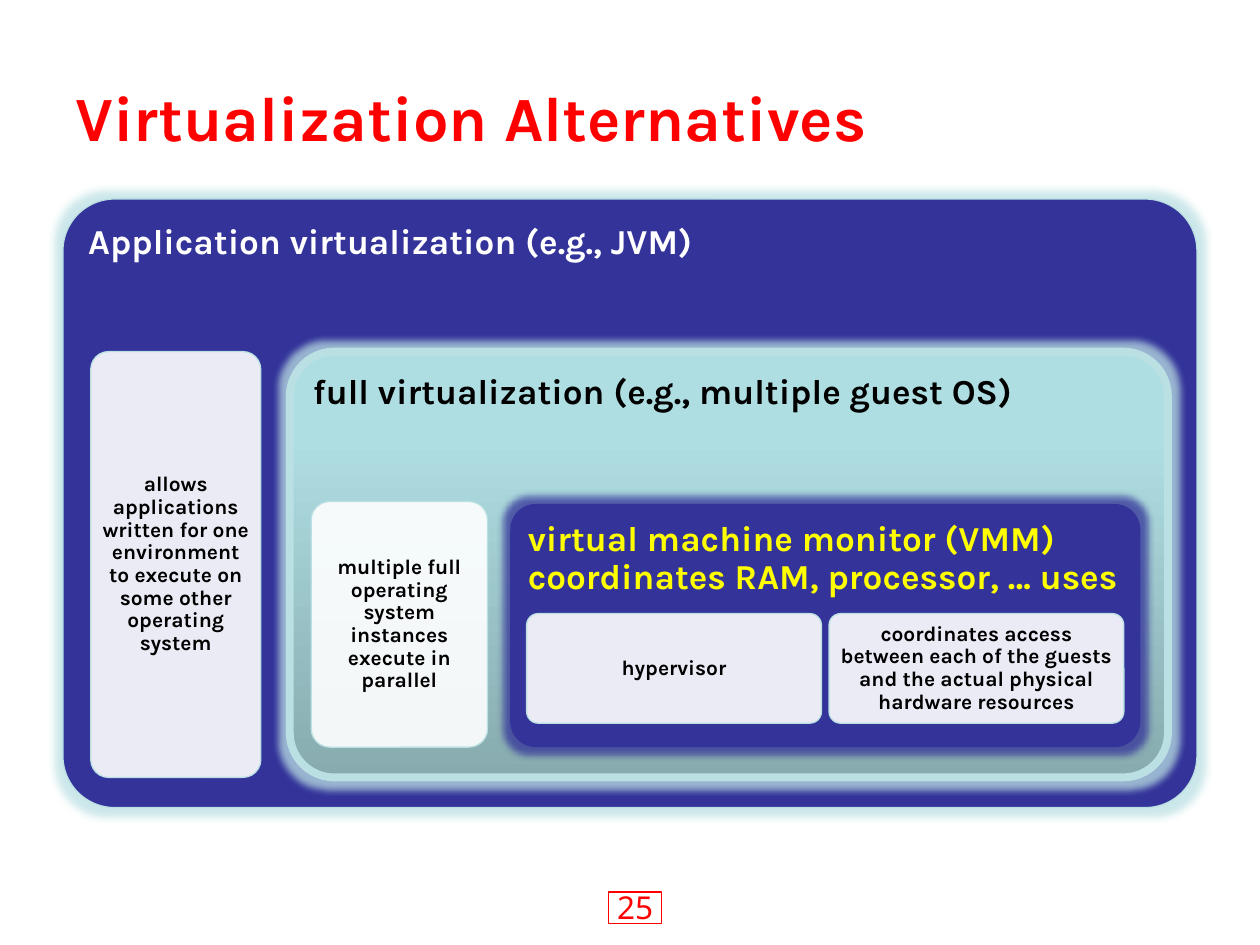
from lxml import etree
from pptx import Presentation
from pptx import util as u
from pptx.dml.color import RGBColor
from pptx.enum import shapes, text
from pptx.oxml import parse_xml
from pptx.oxml.ns import nsdecls, qn

PX = 9144  # EMU in one px, 100 px to the inch
HUE = {"red": "FF0000", "blue": "333399", "teal": "BBE0E3", "white": "FFFFFF",
       "black": "000000", "yellow": "FFFF00"}
RAMP = [(0, "87ABAE"), (80, "AFDEE2"), (100, "AFE0E4")]
KIND, SIDE, EDGE = shapes.MSO_SHAPE, text.PP_ALIGN, text.MSO_ANCHOR
HEAD = {"size": u.Pt(20), "name": "Karla", "bold": True}
BODY = {**HEAD, "size": u.Pt(12)}


def rgb(hue):
    return RGBColor.from_string(HUE[hue])


def place(box):
    return [n * PX for n in box]


def write(shape, words, form, hue, align=SIDE.LEFT, anchor=EDGE.TOP, pad=None, lead=None):
    frame = shape.text_frame
    frame.word_wrap = True
    frame.vertical_anchor = anchor
    if pad is not None:
        for side in ("left", "top", "right", "bottom"):
            setattr(frame, f"margin_{side}", pad * PX)
    para = frame.paragraphs[0]
    para.alignment = align
    if lead:
        para.line_spacing = lead
    run = para.add_run()
    run.text = words
    for key, value in form.items():
        setattr(run.font, key, value)
    run.font.color.rgb = rgb(hue)


def block(slide, kind, box, fill=None, line=None, width=0.75, curve=None):
    shape = slide.shapes.add_shape(kind, *place(box))
    shape.shadow.inherit = False
    if curve:
        shape.adjustments[0] = curve
    if fill:
        shape.fill.solid()
        shape.fill.fore_color.rgb = rgb(fill)
    else:
        shape.fill.background()
    if line:
        shape.line.color.rgb = rgb(line)
        shape.line.width = u.Pt(width)
    else:
        shape.line.fill.background()
    return shape


def glow(shape, hue):
    effect = shape._element.spPr.find(qn("a:effectLst"))
    halo = etree.SubElement(effect, qn("a:glow"), rad=str(u.Pt(8)))
    color = etree.SubElement(halo, qn("a:srgbClr"), val=HUE[hue])
    etree.SubElement(color, qn("a:alpha"), val="75000")


def shade(shape):
    stops = "".join(f'<a:gs pos="{at * 1000}"><a:srgbClr val="{tone}"/></a:gs>'
                    for at, tone in RAMP)
    props = shape._element.spPr
    props.replace(props.find(qn("a:noFill")), parse_xml(
        f'<a:gradFill {nsdecls("a")} rotWithShape="1"><a:gsLst>{stops}</a:gsLst>'
        '<a:lin ang="16200000" scaled="0"/></a:gradFill>'))


def card(slide, box, words):
    shape = block(slide, KIND.ROUNDED_RECTANGLE, box, "white", "teal", curve=0.105)
    color = shape._element.spPr.find(qn("a:solidFill"))[0]
    etree.SubElement(color, qn("a:alpha"), val="90000")
    write(shape, words, BODY, "black", SIDE.CENTER, EDGE.MIDDLE, 5, 0.9)


def panel(slide, box, words, ink, halo, curve=0.105, **style):
    shape = block(slide, KIND.ROUNDED_RECTANGLE, box, curve=curve, **style)
    glow(shape, halo)
    write(shape, words, HEAD, ink, pad=8, lead=0.9)
    return shape


# Innermost layer: two equal cards side by side
def monitor(slide, box):
    x, y, w, h = box
    panel(slide, box, "virtual machine monitor (VMM) coordinates RAM, processor, … uses",
          "yellow", "blue", fill="blue")
    parts = ("hypervisor", "coordinates access between each of the guests "
             "and the actual physical hardware resources")
    for i, words in enumerate(parts):
        card(slide, (x + 13 + 240 * i, y + 87, 234, 87), words)


# Middle layer: gradient panel, one card and the monitor
def full(slide, box):
    x, y, w, h = box
    shape = panel(slide, box, "full virtualization (e.g., multiple guest OS)",
                  "black", "teal", line="teal", width=4.5)
    shade(shape)
    card(slide, (x + 17, y + 119, 140, 195),
         "multiple full operating system instances execute in parallel")
    monitor(slide, (x + 175, y + 121, w - 197, 193))


# Outer layer: one card and the full virtualization panel
def layers(slide, box):
    x, y, w, h = box
    panel(slide, box, "Application virtualization (e.g., JVM)", "white", "teal",
          curve=0.085, fill="blue", line="teal")
    card(slide, (x + 22, y + 121, 135, 338),
         "allows applications written for one environment to execute "
         "on some other operating system")
    full(slide, (x + 180, y + 121, w - 203, 338))


def title(slide, box):
    shape = slide.shapes.add_textbox(*place(box))
    write(shape, "Virtualization Alternatives", {**HEAD, "size": u.Pt(36)}, "red",
          anchor=EDGE.MIDDLE)


# Page number with its frame
def footer(slide, box):
    x, y, w, h = box
    shape = slide.shapes.add_textbox(*place(box))
    write(shape, "25", {"size": u.Pt(18), "name": "Noto Sans"}, "red", SIDE.CENTER)
    block(slide, KIND.RECTANGLE, (x + 25, y + 8, 42, 25), line="red")


def main():
    deck = Presentation()
    deck.slide_width, deck.slide_height = 1000 * PX, 750 * PX
    slide = deck.slides.add_slide(deck.slide_layouts[6])
    footer(slide, (458, 700, 92, 40))
    title(slide, (50, 30, 900, 125))
    layers(slide, (50, 158, 900, 483))
    deck.save("out.pptx")


if __name__ == "__main__":
    main()
